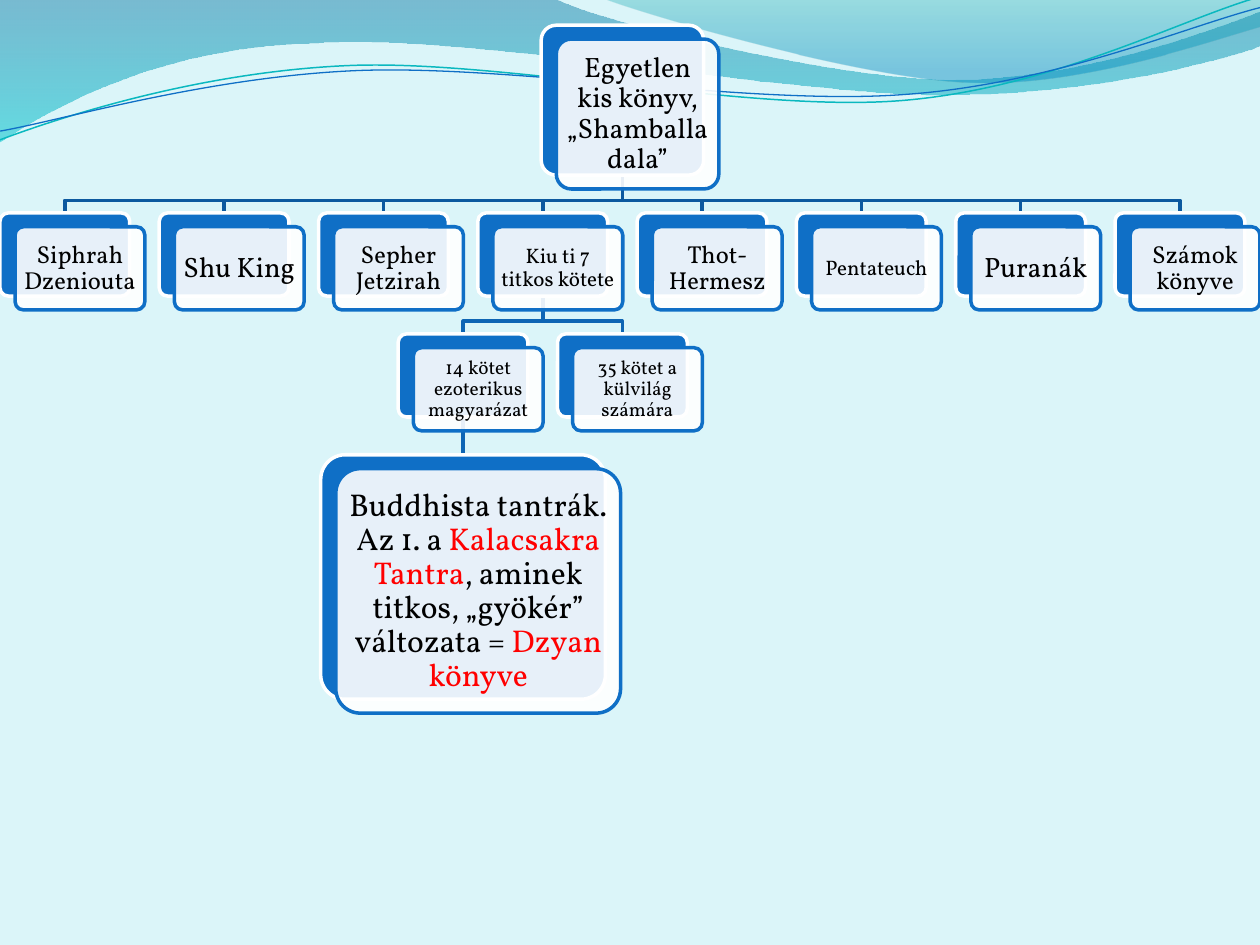
import math
import pptx
import pptx.util
import pptx.dml.color
import pptx.enum.shapes
import pptx.enum.text
import pptx.oxml
import pptx.oxml.ns
from pptx.util import Inches

THEME = {
    "font": "Vollkorn", "background": "DBF5F9", "card": "0F6FC6", "paper": "FFFFFF",
    "text": "000000", "accent": "FF0000", "branch": "0C599F", "twig": "0E65B4",
    "large": 18, "title": 16, "name": 14, "small": 12, "note": 11, "line": 2,
}

ROW_HEIGHTS = [1.19, 0.66, 0.66, 1.94]
ROW_WIDTHS = [1.29, 1.03, 1.03, 2.26]
FIRST_TOP, ROW_GAP = 0.2, 0.3
FIRST_CENTER, PITCH = 1.03 / 2, 8.85 / 7
OFFSET_X, OFFSET_Y = 0.12, 0.11
BEND = 0.2

BOOKS = [
    ("Siphrah Dzeniouta", "name"), ("Shu King", "title"),
    ("Sepher Jetzirah", "name"), ("Kiu ti 7 titkos kötete", "small"),
    ("Thot- Hermesz", "name"), ("Pentateuch", "small"),
    ("Puranák", "title"), ("Számok könyve", "name"),
]
TANTRAS = [
    ("Buddhista tantrák. Az 1. a ", "text"), ("Kalacsakra Tantra", "accent"),
    (", aminek titkos, „gyökér” változata = ", "text"), ("Dzyan könyve", "accent"),
]
CARDS = [
    (0, 3.5, "title", [("Egyetlen kis könyv, „Shamballa dala”", "text")]),
    *[(1, col, size, [(book, "text")]) for col, (book, size) in enumerate(BOOKS)],
    (2, 2.5, "note", [("14 kötet ezoterikus magyarázat", "text")]),
    (2, 3.5, "note", [("35 kötet a külvilág számára", "text")]),
    (3, 2.5, "large", TANTRAS),
]
BRANCHES = [
    (0, 3.5, range(len(BOOKS)), "branch"),
    (1, 3, [2.5, 3.5], "twig"),
]

WAVES = [
    {"path": [(0, 0), (4.4, -0.01), (4.76, 0.17, 6.64, 0.63, 7.58, 0.63),
              (8.53, 0.63, 9.58, 0.26, 10, 0.09), (10.01, 0.36),
              (9.83, 0.44, 8.7, 0.76, 7.46, 0.75), (6.22, 0.75, 3.82, 0.28, 2.57, 0.34),
              (1.29, 0.36, 0.46, 0.83, -0.01, 1.13), (0, 0)],
     "stops": [(0, "0074A1", 45), (1, "00C6CF", 55)]},
    {"path": [(4.79, -0.01), (5.09, 0.11, 6.82, 0.62, 7.69, 0.65),
              (8.56, 0.69, 9.61, 0.32, 10, 0.21), (10, 0), (4.79, -0.01)],
     "stops": [(0, "00A1A9", 30), (0.8, "008BBF", 45)]},
    {"path": [(0, 1.11), (0.48, 0.93, 1.58, 0.57, 2.77, 0.52),
              (3.95, 0.47, 5.93, 0.89, 7.13, 0.8), (8.33, 0.71, 9.38, 0.15, 9.98, -0.02)],
     "line": ("0AB8BF", 0.85), "middle": (4.99, 0.57)},
    {"path": [(0, 1.04), (0.47, 0.96, 1.64, 0.61, 2.83, 0.56),
              (4.03, 0.51, 5.97, 0.84, 7.17, 0.75), (8.36, 0.67, 9.41, 0.21, 10, 0.06)],
     "line": ("0F6FC6", 0.75), "middle": (4.99, 0.59)},
]
WAVE_TILT = -2.7


def rgb(value):
    return pptx.dml.color.RGBColor.from_string(value)


def set_values(target, values):
    for key, value in values.items():
        setattr(target, key, value)


def set_opacity(shape, percents):
    colours = shape._element.spPr.iter(pptx.oxml.ns.qn("a:srgbClr"))
    for colour, percent in zip(colours, percents):
        alpha = pptx.oxml.parse_xml(f'<a:alpha {pptx.oxml.ns.nsdecls("a")} val="{percent * 1000}"/>')
        colour.append(alpha)


def set_line(shape, colour, width):
    shape.line.color.rgb = rgb(colour)
    shape.line.width = pptx.util.Pt(width)


def level(point, middle):
    x, y = point[0] - middle[0], point[1] - middle[1]
    angle = math.radians(-WAVE_TILT)
    return (middle[0] + x * math.cos(angle) - y * math.sin(angle),
            middle[1] + x * math.sin(angle) + y * math.cos(angle))


def add_outline(slide, steps, close=False, middle=None):
    points = [step[i:i + 2] for step in steps for i in range(0, len(step), 2)]
    if middle:
        points = [level(point, middle) for point in points]
    emu = [(Inches(x), Inches(y)) for x, y in points]
    builder = slide.shapes.build_freeform(*emu[0])
    builder.add_line_segments(emu[1:], close=close)
    outline = builder.convert_to_shape()
    outline.shadow.inherit = False
    segments = iter(list(outline._element.spPr.iter(pptx.oxml.ns.qn("a:lnTo"))))
    for step in steps[1:]:
        parts = [next(segments) for _ in range(len(step) // 2)]
        if len(parts) == 3:
            curve = pptx.oxml.parse_xml(f'<a:cubicBezTo {pptx.oxml.ns.nsdecls("a")}/>')
            parts[0].addprevious(curve)
            for part in parts:
                curve.append(part[0])
                part.getparent().remove(part)
    return outline


def add_open_line(slide, steps, colour, width, middle=None):
    outline = add_outline(slide, steps, middle=middle)
    outline.fill.background()
    set_line(outline, colour, width)
    return outline


def add_wave(slide, wave):
    if "line" in wave:
        add_open_line(slide, wave["path"], *wave["line"], wave["middle"]).rotation = WAVE_TILT
        return
    band = add_outline(slide, wave["path"], close=True)
    band.fill.gradient()
    band.fill.gradient_angle = 270
    for stop, (position, colour, _) in zip(band.fill.gradient_stops, wave["stops"]):
        stop.color.rgb = rgb(colour)
        stop.position = position
    set_opacity(band, [opacity for _, _, opacity in wave["stops"]])
    band.line.fill.background()


def row_top(row):
    return FIRST_TOP + sum(ROW_HEIGHTS[:row]) + ROW_GAP * row


def center(col):
    return FIRST_CENTER + PITCH * col


def add_branches(slide, row, col, children, colour):
    start = row_top(row) + ROW_HEIGHTS[row]
    for child in children:
        points = [(center(col), start), (center(col), start + BEND),
                  (center(child), start + BEND), (center(child), start + ROW_GAP)]
        add_open_line(slide, points, THEME[colour], THEME["line"])


def add_box(slide, frame, fill, line):
    box = slide.shapes.add_shape(pptx.enum.shapes.MSO_SHAPE.ROUNDED_RECTANGLE, *frame)
    box.adjustments[0] = 0.1
    box.shadow.inherit = False
    box.fill.solid()
    box.fill.fore_color.rgb = rgb(THEME[fill])
    if fill == "paper":
        set_opacity(box, [90])
    set_line(box, THEME[line], THEME["line"])
    return box


def add_label(slide, frame, points, runs):
    label = slide.shapes.add_textbox(*frame).text_frame
    margin = Inches(min(0.07, points / 230))
    sides = ("left", "top", "right", "bottom")
    set_values(label, {
        "word_wrap": True, "vertical_anchor": pptx.enum.text.MSO_ANCHOR.MIDDLE,
        **{f"margin_{side}": margin for side in sides}})
    paragraph = label.paragraphs[0]
    set_values(paragraph, {"alignment": pptx.enum.text.PP_ALIGN.CENTER, "line_spacing": 0.9})
    for words, colour in runs:
        run = paragraph.add_run()
        run.text = words
        set_values(run.font, {"name": THEME["font"], "size": pptx.util.Pt(points)})
        run.font.color.rgb = rgb(THEME[colour])


def add_card(slide, row, col, size, runs):
    left, top = center(col) - ROW_WIDTHS[row] / 2, row_top(row)
    extent = (Inches(ROW_WIDTHS[row]), Inches(ROW_HEIGHTS[row]))
    front = (Inches(left + OFFSET_X), Inches(top + OFFSET_Y), *extent)
    back = add_box(slide, (Inches(left), Inches(top), *extent), "card", "paper")
    add_box(slide, front, "paper", "card")
    add_label(slide, front, THEME[size], runs)
    return back


def main():
    deck = pptx.Presentation()
    set_values(deck, {"slide_width": Inches(10), "slide_height": Inches(7.5)})
    slide = deck.slides.add_slide(deck.slide_layouts[6])
    slide.background.fill.solid()
    slide.background.fill.fore_color.rgb = rgb(THEME["background"])
    for wave in WAVES:
        add_wave(slide, wave)
    for branch in BRANCHES:
        add_branches(slide, *branch)
    stem = slide.shapes.add_connector(pptx.enum.shapes.MSO_CONNECTOR.STRAIGHT, 0, 0, 0, 0)
    set_line(stem, THEME["twig"], THEME["line"])
    stem._element.spPr.append(pptx.oxml.parse_xml(f'<a:effectLst {pptx.oxml.ns.nsdecls("a")}/>'))
    backs = {(row, col): add_card(slide, row, col, size, runs) for row, col, size, runs in CARDS}
    stem.begin_connect(backs[2, 2.5], 2)
    stem.end_connect(backs[3, 2.5], 0)
    deck.save("out.pptx")


if __name__ == "__main__":
    main()
